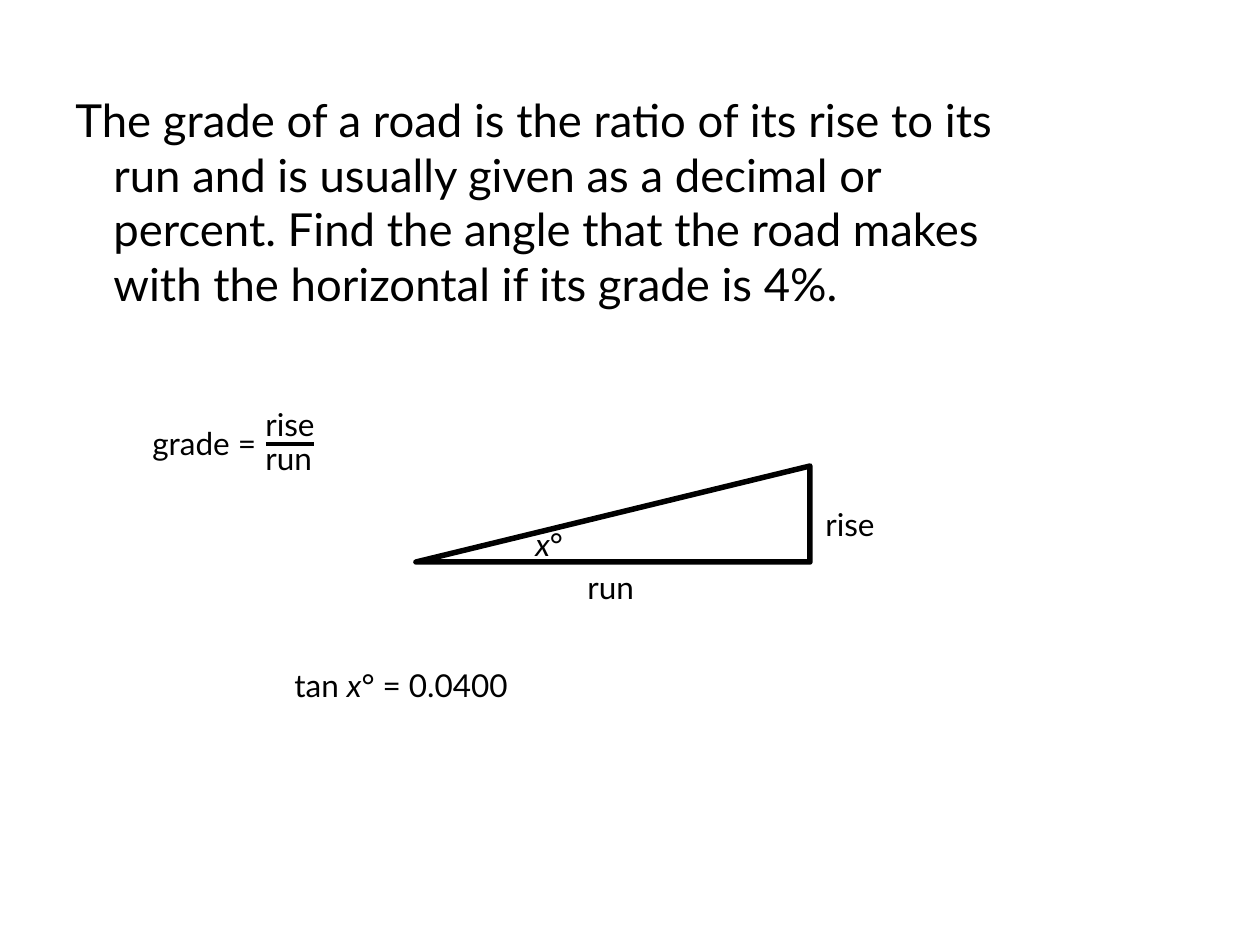
from pptx import Presentation
from pptx.dml.color import RGBColor
from pptx.enum.shapes import MSO_CONNECTOR as Conn, MSO_SHAPE as Kind
from pptx.oxml.ns import qn
from pptx.util import Pt
from lxml.etree import SubElement as add_sub

PX = 914400 / 126
BLACK = RGBColor(0, 0, 0)
WHITE = RGBColor(255, 255, 255)
FONT = {"name": "Lato", "size": Pt(18)}


def emu(*px):
    return [round(n * PX) for n in px]


def set_all(item, vals):
    for key, val in vals.items():
        setattr(item, key, val)


def add_text(shapes, box, runs, size=18, hang=0):
    frame = shapes.add_textbox(*emu(*box)).text_frame
    frame.word_wrap = True
    para = frame.paragraphs[0]
    if hang:
        left, = emu(hang)
        props = para._p.get_or_add_pPr()
        props.set("marL", str(left))
        props.set("indent", str(-left))
    for text, slant in runs:
        run = para.add_run()
        run.text = text
        set_all(run.font, {**FONT, "size": Pt(size), "italic": slant})
        run.font.color.rgb = BLACK


def add_road(shapes, box):
    road = shapes.add_shape(Kind.RIGHT_TRIANGLE, *emu(*box))
    road.shadow.inherit = False
    road.fill.background()
    road.line.color.rgb = BLACK
    road.line.width = Pt(3.15)
    add_sub(road.line._get_or_add_ln(), qn("a:round"))
    road._element.spPr.find(qn("a:xfrm")).set("flipH", "1")


def add_bar(shapes, ends):
    bar = shapes.add_connector(Conn.STRAIGHT, *emu(*ends))
    bar.line.color.rgb = BLACK
    bar.line.width = Pt(2.25)
    add_sub(bar._element.spPr, qn("a:effectLst"))


def add_grade(shapes):
    group = shapes.add_group_shape().shapes
    add_text(group, (140, 418, 151, 50), [("grade =", False)])
    add_text(group, (253, 399, 126, 50), [("rise", False)])
    add_text(group, (253, 433, 126, 50), [("run", False)])
    add_bar(group, (266, 444, 314, 444))


def main():
    deck = Presentation()
    width, height = emu(1260, 945)
    set_all(deck, {"slide_width": width, "slide_height": height})
    slide = deck.slides.add_slide(deck.slide_layouts[6])
    back = slide.background.fill
    back.solid()
    back.fore_color.rgb = WHITE
    shapes = slide.shapes
    task = (
        "The grade of a road is the ratio of its rise to its run "
        "and is usually given as a decimal or percent. Find the angle "
        "that the road makes with the horizontal if its grade is 4%."
    )
    add_text(shapes, (63, 86, 998, 804), [(task, False)], 26, 38)
    add_road(shapes, (416, 466, 394, 96))
    add_text(shapes, (813, 499, 126, 50), [("rise", False)])
    add_text(shapes, (575, 562, 126, 50), [("run", False)])
    add_text(shapes, (523, 519, 126, 50), [("x", True), ("°", False)])
    add_grade(shapes)
    add_text(shapes, (282, 660, 378, 50),
             [("tan ", False), ("x", True), ("° = 0.0400", False)])
    deck.save("out.pptx")


if __name__ == "__main__":
    main()
